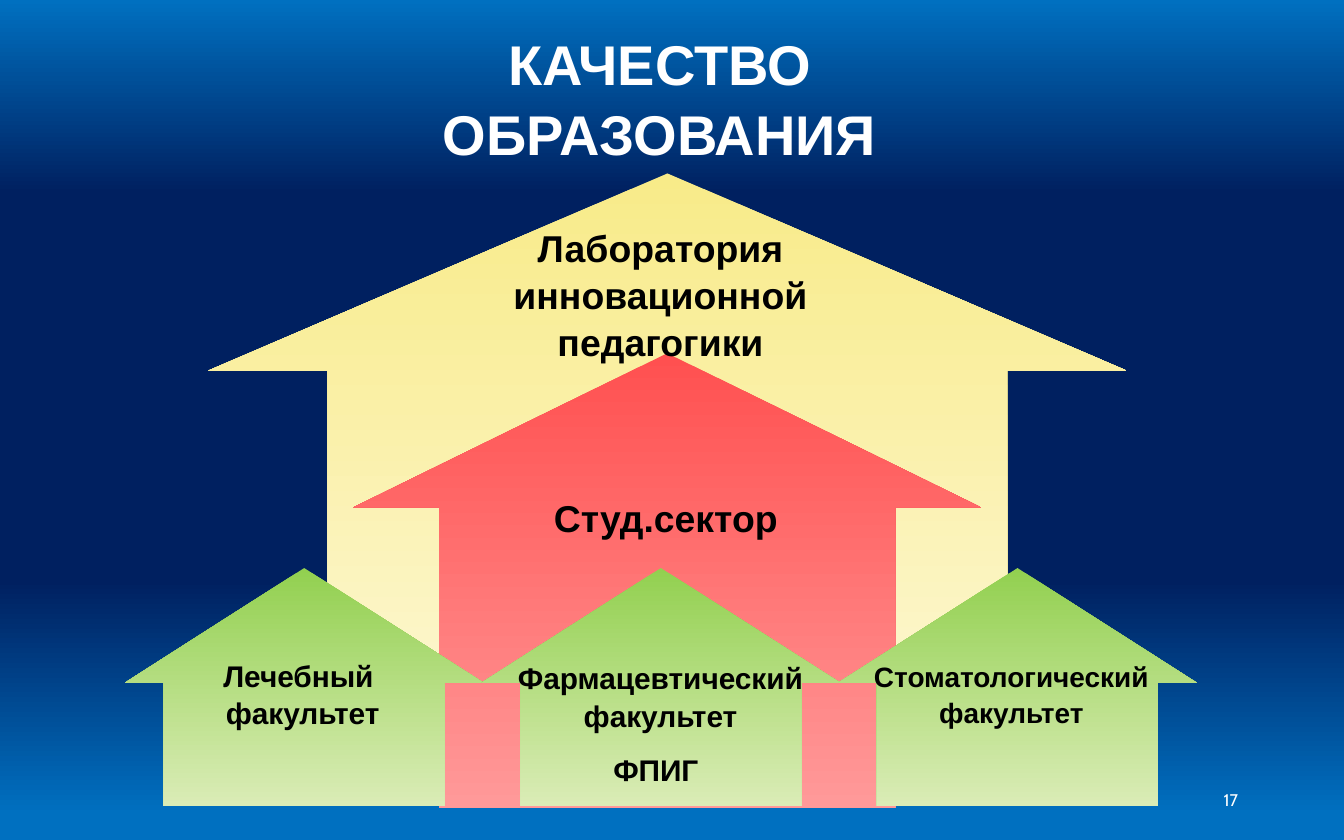
from copy import deepcopy
from dataclasses import dataclass

from pptx import Presentation
from pptx.dml.color import RGBColor
from pptx.enum.shapes import MSO_SHAPE as Shape
from pptx.enum.text import MSO_ANCHOR as Anchor, MSO_AUTO_SIZE as AutoSize, PP_ALIGN as Align
from pptx.oxml.ns import qn
from pptx.util import Cm, Pt

TITLE_ONLY = 5
WHITE, BLACK = "FFFFFF", "000000"
GREEN = ("92D050", "DAECB6")
FACULTY_LEFT, FACULTY_STEP = 2.36, 6.74


@dataclass
class House:
    """An up arrow; lengths are in centimetres."""
    left: float
    top: float
    width: float
    height: float
    shaft: float
    roof: float
    colors: tuple[str, str]


@dataclass
class Label:
    """A text block; lengths are in centimetres, size in points."""
    text: str
    left: float
    top: float
    width: float
    height: float
    size: int
    color: str = BLACK
    wrap: bool = False
    bold: bool = True
    font: str = "Arial"
    align: Align = Align.CENTER
    anchor: Anchor = Anchor.TOP
    spacing: float = 1.05


HOUSES = [
    House(3.94, 3.28, 17.35, 11.43, 0.74, 0.326, ("F8EB89", "FDF8D8")),
    House(6.68, 6.68, 11.86, 8.59, 0.727, 0.339, ("FF5050", "FF9999")),
] + [
    House(FACULTY_LEFT + i * FACULTY_STEP, 10.74, 6.78, 4.5, 0.783, 0.482, GREEN)
    for i in range(3)
]

TITLE = Label("КАЧЕСТВО ОБРАЗОВАНИЯ", 5.97, 0.36, 13, 2.82, 30, WHITE, wrap=True)

LABELS = [
    Label("Студ.сектор", 10.21, 9.19, 4.75, 1.09, 20),
    Label("Лаборатория инновационной педагогики", 8.79, 4.09, 7.39, 2.79, 20, wrap=True),
    Label("Лечебный \nфакультет", 3.94, 12.27, 3.56, 1.63, 16),
    Label("Фармацевтический\nфакультет", 9.5, 12.32, 5.97, 1.63, 16),
    Label("Стоматологический\nфакультет", 16.23, 12.32, 5.77, 1.55, 15),
    Label("ФПИГ", 11.33, 14.05, 2.13, 0.94, 16),
    Label("17", 17.93, 14.71, 5.72, 0.84, 9, WHITE, wrap=True, bold=False,
          font="Cabin", align=Align.RIGHT, anchor=Anchor.MIDDLE, spacing=1),
]


def rgb(color: str) -> RGBColor:
    return RGBColor.from_string(color)


def paint_gradient(owner, fill, stops: list[tuple[float, str]]) -> None:
    """Fill from top to bottom with any number of (position, color) stops."""
    fill.gradient()
    fill.gradient_angle = 270
    stop_list = next(owner.element.iter(qn("a:gsLst")))
    while len(stop_list) < len(stops):
        stop_list.append(deepcopy(stop_list[0]))
    for stop, (position, color) in zip(fill.gradient_stops, stops):
        stop.position = position
        stop.color.rgb = rgb(color)


def draw_house(page, house: House) -> None:
    arrow = page.shapes.add_shape(
        Shape.UP_ARROW, Cm(house.left), Cm(house.top), Cm(house.width), Cm(house.height))
    arrow.adjustments[0] = house.shaft
    arrow.adjustments[1] = house.roof
    arrow.shadow.inherit = False
    arrow.line.fill.background()
    paint_gradient(arrow, arrow.fill, list(zip((0, 1), house.colors)))


def write_label(box, label: Label) -> None:
    for side in ("left", "top", "width", "height"):
        setattr(box, side, Cm(getattr(label, side)))
    frame = box.text_frame
    frame.text = label.text
    frame_format = {"word_wrap": label.wrap, "auto_size": AutoSize.NONE,
                    "vertical_anchor": label.anchor}
    for name, value in frame_format.items():
        setattr(frame, name, value)
    font_format = {"name": label.font, "size": Pt(label.size), "bold": label.bold}
    for para in frame.paragraphs:
        para.alignment = label.align
        para.line_spacing = label.spacing
        for span in para.runs:
            for name, value in font_format.items():
                setattr(span.font, name, value)
            span.font.color.rgb = rgb(label.color)


def main() -> None:
    deck = Presentation()
    deck.slide_width, deck.slide_height = Cm(25.4), Cm(15.88)
    page = deck.slides.add_slide(deck.slide_layouts[TITLE_ONLY])
    paint_gradient(page, page.background.fill, [
        (0, "0070C0"), (0.23, "002060"), (0.69, "002060"), (0.97, "0070C0")])

    write_label(page.shapes.title, TITLE)
    for house in HOUSES:
        draw_house(page, house)
    for label in LABELS:
        write_label(page.shapes.add_textbox(0, 0, 0, 0), label)
    deck.save("out.pptx")


if __name__ == "__main__":
    main()
